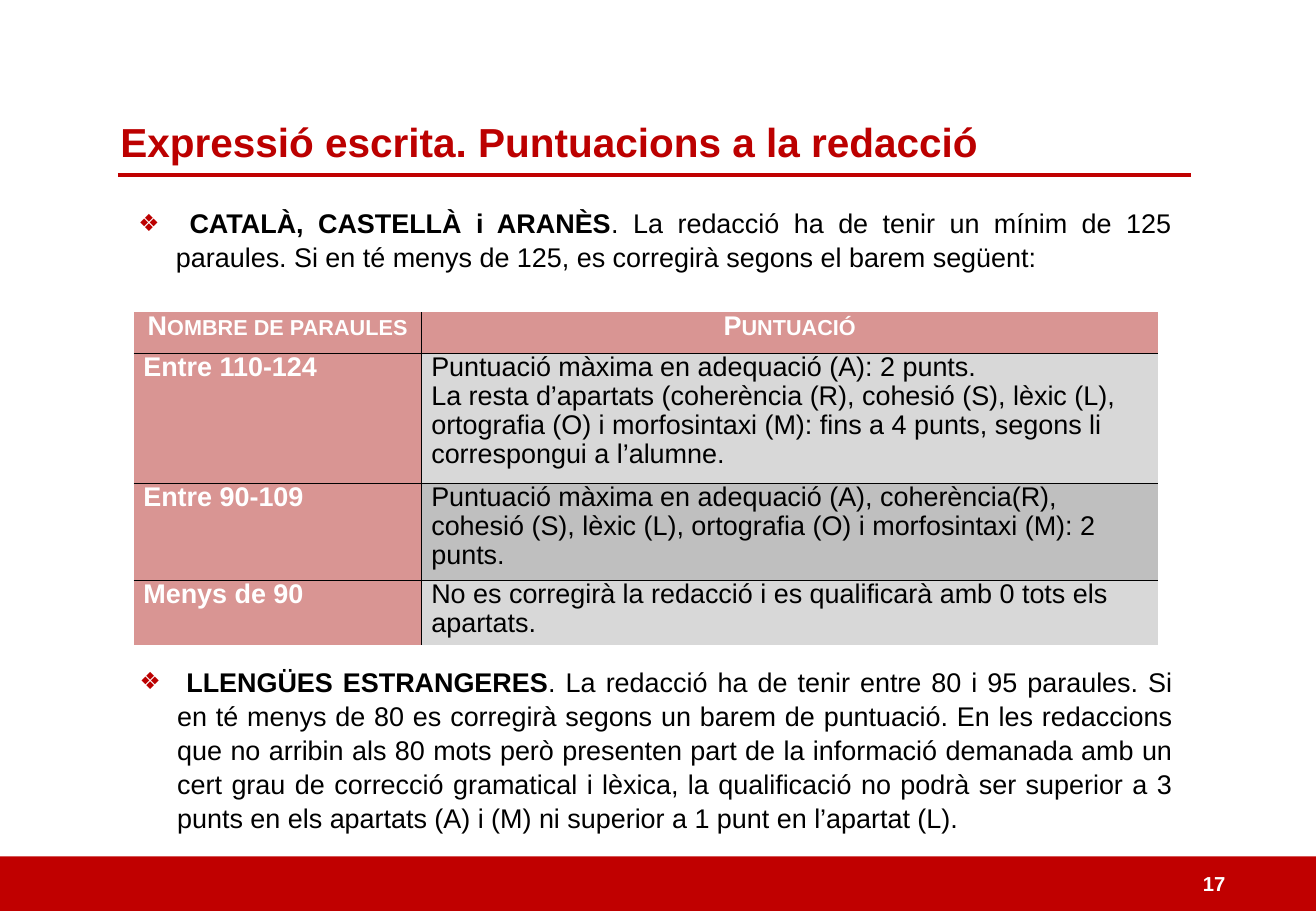
from lxml import etree
from pptx import Presentation
from pptx.dml.color import RGBColor
from pptx.enum.shapes import MSO_CONNECTOR, MSO_SHAPE
from pptx.enum.text import MSO_ANCHOR, MSO_AUTO_SIZE, PP_ALIGN
from pptx.oxml.ns import qn
from pptx.util import Inches, Pt

TOP, MIDDLE = MSO_ANCHOR.TOP, MSO_ANCHOR.MIDDLE
LEFT, CENTER, JUSTIFY = PP_ALIGN.LEFT, PP_ALIGN.CENTER, PP_ALIGN.JUSTIFY
RECTANGLE, STRAIGHT = MSO_SHAPE.RECTANGLE, MSO_CONNECTOR.STRAIGHT
NO_AUTOSIZE = MSO_AUTO_SIZE.NONE

RED, TITLE_RED, PINK = "C00000", "BC0000", "D99593"
LIGHT_GRAY, MID_GRAY = "D8D8D8", "BFBFBF"
WHITE, BLACK = "FFFFFF", "000000"

COLUMN_WIDTHS = (2.37, 6.06)
ROW_HEIGHTS = (0.34, 1.07, 0.8, 0.53)
SCORES = (
    ("Nombre de paraules", "Puntuació"),
    ("Entre 110-124",
     "Puntuació màxima en adequació (A): 2 punts.\n"
     "La resta d’apartats (coherència (R), cohesió (S), lèxic (L), ortografia (O) "
     "i morfosintaxi (M): fins a 4 punts, segons li correspongui a l’alumne."),
    ("Entre 90-109",
     "Puntuació màxima en adequació (A), coherència(R), cohesió (S), lèxic (L), "
     "ortografia (O) i morfosintaxi (M): 2 punts."),
    ("Menys de 90",
     "No es corregirà la redacció i es qualificarà amb 0 tots els apartats."),
)
CATALAN_RULE = (
    "CATALÀ, CASTELLÀ i ARANÈS",
    ". La redacció ha de tenir un mínim de 125 paraules. Si en té menys de 125, "
    "es corregirà segons el barem següent:")
FOREIGN_RULE = (
    "LLENGÜES ESTRANGERES",
    ". La redacció ha de tenir entre 80 i 95 paraules. Si en té menys de 80 es "
    "corregirà segons un barem de puntuació. En les redaccions que no arribin als "
    "80 mots però presenten part de la informació demanada amb un cert grau de "
    "correcció gramatical i lèxica, la qualificació no podrà ser superior a 3 punts "
    "en els apartats (A) i (M) ni superior a 1 punt en l’apartat (L).")


def color(hex_text):
    return RGBColor.from_string(hex_text)


def set_font(font, size, hex_text, bold=None):
    font.name = "Arial"
    font.size = Pt(size)
    font.color.rgb = color(hex_text)
    font.bold = bold


def set_frame(frame, anchor):
    frame.word_wrap = True
    frame.auto_size = NO_AUTOSIZE
    frame.vertical_anchor = anchor
    frame.margin_left = frame.margin_right = Inches(0.1)
    frame.margin_top = frame.margin_bottom = Inches(0.05)


def add_text_box(slide, left, top, width, height):
    box = slide.shapes.add_textbox(
        Inches(left), Inches(top), Inches(width), Inches(height))
    set_frame(box.text_frame, MIDDLE)
    return box.text_frame


def add_footer(slide, left, top, width, height):
    band = slide.shapes.add_shape(
        RECTANGLE, Inches(left), Inches(top), Inches(width), Inches(height))
    band.shadow.inherit = False
    band.fill.solid()
    band.fill.fore_color.rgb = color(RED)
    band.line.fill.background()
    number = add_text_box(slide, left + width - 1.03, top + 0.06, 0.91, 0.33)
    number.text = "17"
    set_font(number.paragraphs[0].font, 12, WHITE, True)


def add_title(slide, left, top, width, height):
    title = slide.shapes.title
    title.left, title.top = Inches(left), Inches(top)
    title.width, title.height = Inches(width), Inches(height)
    set_frame(title.text_frame, TOP)
    title.text_frame.text = "Expressió escrita. Puntuacions a la redacció"
    paragraph = title.text_frame.paragraphs[0]
    paragraph.alignment = LEFT
    set_font(paragraph.font, 24, TITLE_RED, True)

    rule_left, rule_top = left + 0.08, top + height + 0.03
    rule = slide.shapes.add_connector(
        STRAIGHT, Inches(rule_left), Inches(rule_top),
        Inches(rule_left + 8.83), Inches(rule_top))
    rule.line.color.rgb = color(RED)
    rule.line.width = Pt(2.25)
    etree.SubElement(rule._element.spPr, qn("a:effectLst"))


def add_bullet(paragraph):
    properties = paragraph._p.get_or_add_pPr()
    properties.set("marL", str(Inches(0.31)))
    properties.set("indent", str(-Inches(0.31)))
    bullet_color = etree.SubElement(properties, qn("a:buClr"))
    etree.SubElement(bullet_color, qn("a:srgbClr"), val=TITLE_RED)
    etree.SubElement(properties, qn("a:buFont"), typeface="Arial")
    etree.SubElement(properties, qn("a:buChar"), char="❖")


def add_rule_text(slide, heading, body, left, top, width, height):
    paragraph = add_text_box(slide, left, top, width, height).paragraphs[0]
    add_bullet(paragraph)
    paragraph.alignment = JUSTIFY
    paragraph.line_spacing = 1.05
    for text, size, bold in ((" ", 14, False), (heading, 16, True), (body, 16, False)):
        run = paragraph.add_run()
        run.text = text
        set_font(run.font, size, BLACK, bold)


def set_borders(cell, visible_sides):
    """Draw a thin black line on the visible sides and none on the others."""
    properties = cell._tc.get_or_add_tcPr()
    for index, side in enumerate("LRTB"):
        line = etree.Element(qn("a:ln" + side), w=str(Pt(1)))
        if side in visible_sides:
            fill = etree.SubElement(line, qn("a:solidFill"))
            etree.SubElement(fill, qn("a:srgbClr"), val=BLACK)
        else:
            etree.SubElement(line, qn("a:noFill"))
        properties.insert(index, line)


def fill_cell(cell, text, row, column):
    is_header = row == 0
    is_label = is_header or column == 0
    cell.margin_left = cell.margin_right = Inches(0.08)
    cell.margin_top = cell.margin_bottom = 0
    cell.vertical_anchor = TOP
    cell.fill.solid()
    band = MID_GRAY if row % 2 == 0 else LIGHT_GRAY
    cell.fill.fore_color.rgb = color(PINK if is_label else band)
    inner_sides = "R" if column == 0 else "L"
    inner_sides += "" if is_header else "T"
    inner_sides += "B" if row < len(SCORES) - 1 else ""
    set_borders(cell, inner_sides)

    cell.text_frame.text = text
    for paragraph in cell.text_frame.paragraphs:
        paragraph.alignment = CENTER if is_header else LEFT
        paragraph.line_spacing = 0.97
        set_font(paragraph.font, 16, WHITE if is_label else BLACK, is_label)
        if is_header:
            paragraph.runs[0]._r.get_or_add_rPr().set("cap", "small")


def add_score_table(slide, left, top):
    table = slide.shapes.add_table(
        len(SCORES), len(COLUMN_WIDTHS), Inches(left), Inches(top),
        Inches(sum(COLUMN_WIDTHS)), Inches(sum(ROW_HEIGHTS))).table
    table.horz_banding = False
    table.first_row = False
    for column, width in zip(table.columns, COLUMN_WIDTHS):
        column.width = Inches(width)
    for row, height in zip(table.rows, ROW_HEIGHTS):
        row.height = Inches(height)
    for row, texts in enumerate(SCORES):
        for column, text in enumerate(texts):
            fill_cell(table.cell(row, column), text, row, column)


def main():
    presentation = Presentation()
    presentation.slide_width = Inches(10.83)
    presentation.slide_height = Inches(7.5)
    slide = presentation.slides.add_slide(presentation.slide_layouts[5])
    add_footer(slide, 0, 7.05, 10.83, 0.45)
    add_title(slide, 0.89, 0.91, 7.51, 0.5)
    add_rule_text(slide, *CATALAN_RULE, 1.04, 1.65, 8.7, 0.64)
    add_score_table(slide, 1.1, 2.57)
    add_rule_text(slide, *FOREIGN_RULE, 1.05, 5.44, 8.7, 1.45)
    presentation.save("out.pptx")


if __name__ == "__main__":
    main()
